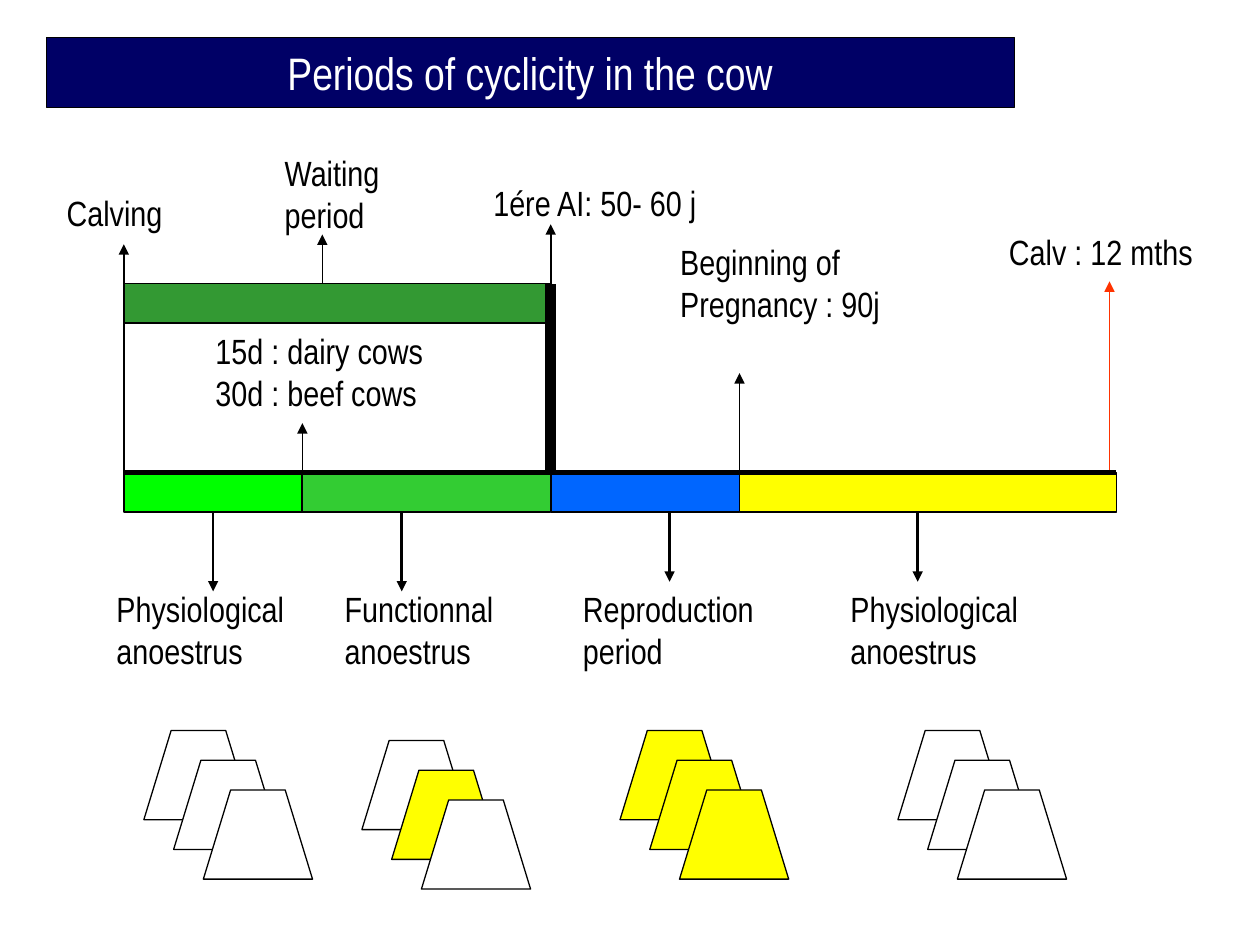
from dataclasses import dataclass

from lxml.etree import SubElement
from pptx import Presentation
from pptx.dml.color import RGBColor
from pptx.enum.shapes import MSO_CONNECTOR, MSO_SHAPE
from pptx.enum.text import MSO_ANCHOR, MSO_AUTO_SIZE, PP_ALIGN
from pptx.oxml.ns import qn
from pptx.util import Pt


@dataclass(frozen=True)
class Theme:
    font: str = "Arial Narrow"
    title_size: float = 26
    label_size: float = 20
    ink: str = "000000"
    paper: str = "FFFFFF"
    navy: str = "000066"
    lime: str = "00FF00"
    green: str = "33CC33"
    dark_green: str = "339933"
    blue: str = "0066FF"
    yellow: str = "FFFF00"
    red: str = "FF3300"


THEME = Theme()


def write_text(frame, lines, *, size, color, align=PP_ALIGN.LEFT):
    """Fill a text frame with one paragraph per line."""
    frame.text = "\n".join(lines)
    for paragraph in frame.paragraphs:
        paragraph.alignment = align
        font = paragraph.runs[0].font
        font.name = THEME.font
        font.size = Pt(size)
        font.color.rgb = RGBColor.from_string(color)


class SlideBuilder:
    def __init__(self, slide, theme):
        self.shapes = slide.shapes
        self.theme = theme

    def paint(self, shape, fill, weight):
        shape.shadow.inherit = False
        shape.fill.solid()
        shape.fill.fore_color.rgb = RGBColor.from_string(fill)
        shape.line.color.rgb = RGBColor.from_string(self.theme.ink)
        shape.line.width = Pt(weight)

    def bar(self, left, top, width, height, fill, weight=1):
        bar = self.shapes.add_shape(
            MSO_SHAPE.RECTANGLE, Pt(left), Pt(top), Pt(width), Pt(height))
        self.paint(bar, fill, weight)
        return bar

    def title(self, text, left, top, width, height):
        banner = self.bar(left, top, width, height, self.theme.navy, 0.75)
        banner.text_frame.vertical_anchor = MSO_ANCHOR.MIDDLE
        write_text(banner.text_frame, [text], size=self.theme.title_size,
                   color=self.theme.paper, align=PP_ALIGN.CENTER)

    def label(self, lines, left, top, width, wrap=False):
        height = 55.2 if wrap or len(lines) > 1 else 31.5
        frame = self.shapes.add_textbox(
            Pt(left), Pt(top), Pt(width), Pt(height)).text_frame
        frame.word_wrap = wrap
        frame.auto_size = MSO_AUTO_SIZE.SHAPE_TO_FIT_TEXT
        write_text(frame, lines, size=self.theme.label_size, color=self.theme.ink)

    def line(self, start, end, weight, color=None, arrow=False):
        line = self.shapes.add_connector(
            MSO_CONNECTOR.STRAIGHT, *map(Pt, start + end))
        line.line.color.rgb = RGBColor.from_string(color or self.theme.ink)
        line.line.width = Pt(weight)
        if arrow:
            SubElement(line.line._get_or_add_ln(), qn("a:tailEnd"), type="triangle")
        SubElement(line._element.spPr, qn("a:effectLst"))

    def trapezoid(self, left, top, fill):
        width, height, inset = 62.4, 51, 15.6
        bottom, right = top + height, left + width
        builder = self.shapes.build_freeform(Pt(left), Pt(bottom))
        corners = [(left + inset, top), (right - inset, top), (right, bottom)]
        builder.add_line_segments([(Pt(x), Pt(y)) for x, y in corners], close=True)
        self.paint(builder.convert_to_shape(), fill, 0.75)

    def trapezoid_stack(self, left, top, fills):
        step = 17
        for index, fill in enumerate(fills):
            self.trapezoid(left + index * step, top + index * step, fill)


def main():
    deck = Presentation()
    deck.slide_width, deck.slide_height = Pt(720), Pt(540)
    theme = THEME
    page = SlideBuilder(deck.slides.add_slide(deck.slide_layouts[6]), theme)

    calving, resumption, first_ai, pregnancy, cycle_end = 70.8, 172.8, 314.7, 422.6, 638
    axis, waiting_top, bar_height = 270, 162, 22.8
    phases_bottom = axis + bar_height

    page.title("Periods of cyclicity in the cow", 26.6, 21.4, 553, 39.9)

    bounds = [calving, resumption, first_ai, pregnancy, cycle_end]
    phase_fills = [theme.lime, theme.green, theme.blue, theme.yellow]
    for start, end, fill in zip(bounds, bounds[1:], phase_fills):
        page.bar(start, axis, end - start, bar_height, fill)
    page.line((calving, axis), (cycle_end, axis), 3)
    page.bar(calving, waiting_top, first_ai - calving, bar_height, theme.dark_green)
    page.line((first_ai, axis), (first_ai, waiting_top), 6)

    # Events: x, arrow start, arrow end, weight, colour
    events = [
        (calving, axis, 139.6, 0.75, theme.ink),
        (resumption, axis, 241.8, 0.75, theme.ink),
        (184.2, waiting_top, 134, 0.75, theme.ink),
        (first_ai, waiting_top, 128.2, 1, theme.ink),
        (pregnancy, axis, 213.2, 1, theme.ink),
        (634, 268.6, 160.8, 0.75, theme.red),
    ]
    for x, start, end, weight, color in events:
        page.line((x, start), (x, end), weight, color, arrow=True)

    event_labels = [
        (["Calving"], 31, 106, 69.8),
        (["Waiting", "period"], 155.6, 82.8, 93.6),
        (["15d : dairy cows", "30d : beef cows"], 116, 185, 133.2),
        (["1ére AI: 50- 60 j"], 274.8, 100, 131),
        (["Beginning of", "Pregnancy : 90j"], 381.6, 134, 129.6),
        (["Calv : 12 mths"], 569.5, 128.3, 120.2),
    ]
    for lines, left, top, width in event_labels:
        page.label(lines, left, top, width)

    # Phases: label lines, label left, label width, wrap, arrow x, arrow end,
    # stack left, stack top, stack fills
    resting = [theme.paper] * 3
    phases = [
        (["Physiological", "anoestrus"], 59.5, 116, False, 121.8, 338,
         82.2, 417.4, resting),
        (["Functionnal anoestrus"], 189.8, 128.9, True, 229.6, 338,
         206.8, 423.1, [theme.paper, theme.yellow, theme.paper]),
        (["Reproduction", "period"], 326, 117.4, False, 382.6, 332.4,
         354.3, 417.4, [theme.yellow] * 3),
        (["Physiological", "anoestrus"], 478.9, 116, False, 524.4, 332.4,
         513.1, 417.4, resting),
    ]
    for lines, left, width, wrap, x, tip, stack_left, stack_top, fills in phases:
        page.line((x, phases_bottom), (x, tip), 1.5, arrow=True)
        page.label(lines, left, 332.4, width, wrap)
        page.trapezoid_stack(stack_left, stack_top, fills)

    deck.save("out.pptx")


if __name__ == "__main__":
    main()
